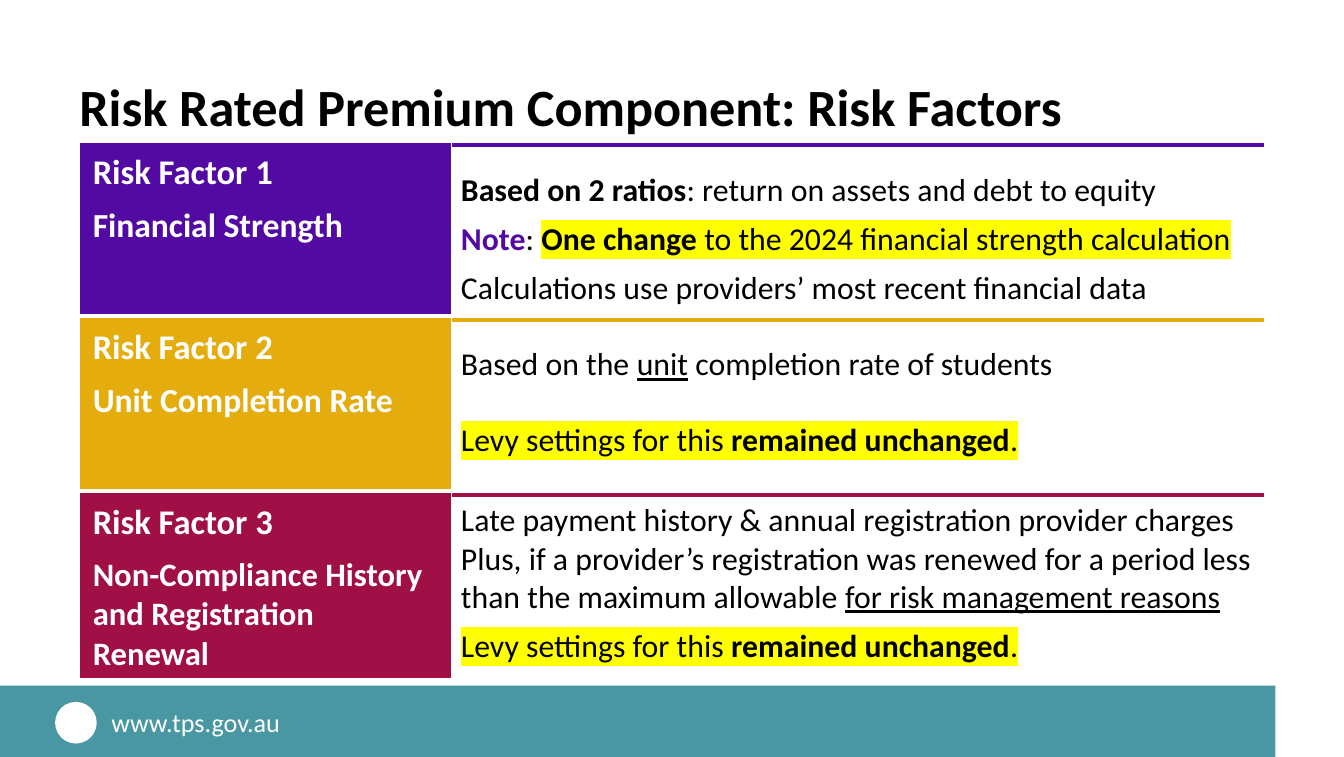
from lxml.etree import SubElement
from pptx import Presentation
from pptx.dml.color import RGBColor
from pptx.enum.shapes import MSO_SHAPE
from pptx.enum.text import MSO_ANCHOR, PP_ALIGN
from pptx.oxml import parse_xml
from pptx.oxml.ns import nsdecls, qn
from pptx.util import Inches, Pt

BLACK, WHITE, TEAL, YELLOW = "000000", "FFFFFF", "4897A2", "FFFF00"
PURPLE, GOLD, CRIMSON = "520AA2", "E5AC0D", "A01047"


def rgb(color):
    return RGBColor.from_string(color)


def run(text, **style):
    return text, style


UNCHANGED = [run("Levy settings for this ", highlight=YELLOW),
             run("remained unchanged", bold=True, highlight=YELLOW),
             run(".", highlight=YELLOW)]

# colour, number, name, name size, text top, text height, space after, paragraphs
FACTORS = [
    (PURPLE, 1, "Financial Strength", 18, 1.22, 1.1, 6, [
        [run("Based on 2 ratios", bold=True),
         run(": return on assets and debt to equity")],
        [run("Note", bold=True, color=PURPLE), run(": "),
         run("One change ", bold=True, highlight=YELLOW),
         run("to the 2024 financial strength calculation", highlight=YELLOW)],
        [run("Calculations use providers’ most recent financial data")],
    ]),
    (GOLD, 2, "Unit Completion Rate", 18, 2.52, 0.93, 20, [
        [run("Based on the "), run("unit", underline=True),
         run(" completion rate of students")],
        UNCHANGED,
    ]),
    (CRIMSON, 3, "Non-Compliance History and Registration Renewal", 17.5, 3.68, 1.67, 6, [
        [run("Late payment history & annual registration provider charges "
             "Plus, if a provider’s registration was renewed for a period less "
             "than the maximum allowable "),
         run("for risk management reasons", underline=True)],
        UNCHANGED,
    ]),
]


class Deck:
    """Holds the font and the current slide."""

    font = "Calibri"

    def __init__(self, prs):
        self.s = prs.slides.add_slide(prs.slide_layouts[5])

    def style(self, p, size, color, bold=None):
        p.font.name, p.font.size, p.font.bold = self.font, Pt(size), bold
        p.font.color.rgb = rgb(color)

    def title(self, text, x, y, w, h):
        sp = self.s.shapes.title
        sp.left, sp.top, sp.width, sp.height = map(Inches, (x, y, w, h))
        tf = sp.text_frame
        tf.margin_left = tf.margin_right = tf.margin_top = tf.margin_bottom = 0
        tf.vertical_anchor = MSO_ANCHOR.TOP
        p = tf.paragraphs[0]
        p.text, p.alignment = text, PP_ALIGN.LEFT
        self.style(p, 28, BLACK, True)

    def shape(self, kind, color, x, y, w, h):
        sp = self.s.shapes.add_shape(kind, *map(Inches, (x, y, w, h)))
        sp.shadow.inherit = False
        sp.fill.solid()
        sp.fill.fore_color.rgb = rgb(color)
        sp.line.fill.background()

    def run(self, p, text, bold=None, underline=None, color=None, highlight=None):
        r = p.add_run()
        r.text = text
        r.font.bold, r.font.underline = bold, underline
        if color:
            r.font.color.rgb = rgb(color)
        if highlight:
            mark = SubElement(r.font._element, qn("a:highlight"))
            SubElement(mark, qn("a:srgbClr"), val=highlight)

    def text(self, paragraphs, x, y, w, h, size, color=BLACK, after=0,
             margins=(0.07, 0.04), anchor=MSO_ANCHOR.TOP):
        tf = self.s.shapes.add_textbox(*map(Inches, (x, y, w, h))).text_frame
        tf.word_wrap, tf.vertical_anchor = True, anchor
        tf.margin_left = tf.margin_right = Inches(margins[0])
        tf.margin_top = tf.margin_bottom = Inches(margins[1])
        for i, runs in enumerate(paragraphs):
            p = tf.add_paragraph() if i else tf.paragraphs[0]
            p.space_after = Pt(after)
            self.style(p, size, color)
            for text, style in runs:
                self.run(p, text, **style)

    def factor_table(self, color, lines, x, y, widths, h):
        """One row: a filled label cell and an open cell, under a coloured rule."""
        box = map(Inches, (x, y, sum(widths), h))
        table = self.s.shapes.add_table(1, 2, *box).table
        table.first_row = table.horz_banding = False
        for i, width in enumerate(widths):
            table.columns[i].width = Inches(width)
            cell = table.cell(0, i)
            cell.fill.background()
            cell._tc.get_or_add_tcPr().insert(0, parse_xml(
                f'<a:lnT {nsdecls("a")} w="{Pt(2.25)}"><a:solidFill>'
                f'<a:srgbClr val="{color}"/></a:solidFill></a:lnT>'))
        label = table.cell(0, 0)
        label.fill.solid()
        label.fill.fore_color.rgb = rgb(color)
        tf = label.text_frame
        for i, (text, size) in enumerate(lines):
            p = tf.add_paragraph() if i else tf.paragraphs[0]
            p.text = text
            self.style(p, size, WHITE, True)
        tf.paragraphs[0].space_after = Pt(6)


def main():
    prs = Presentation()
    prs.slide_width, prs.slide_height = Inches(10), Inches(5.63)
    deck = Deck(prs)
    deck.shape(MSO_SHAPE.RECTANGLE, TEAL, 0, 5.1, 9.49, 0.53)
    deck.title("Risk Rated Premium Component: Risk Factors", 0.59, 0.55, 8.82, 0.47)
    deck.text([[run("www.tps.gov.au")]], 0.73, 5.2, 1.48, 0.34, 14, WHITE,
              margins=(0.1, 0.05), anchor=MSO_ANCHOR.MIDDLE)
    deck.shape(MSO_SHAPE.OVAL, WHITE, 0.41, 5.22, 0.31, 0.31)

    left, top, pitch, widths = 0.59, 1.08, 1.3, (2.77, 6.05)
    for i, (color, number, name, size, y, h, after, paragraphs) in enumerate(FACTORS):
        lines = [(f"Risk Factor {number}", 18.5), (name, size)]
        deck.factor_table(color, lines, left, top + i * pitch, widths, 1.26)
        deck.text(paragraphs, left + widths[0], y, widths[1], h, 17, after=after)
    prs.save("out.pptx")


if __name__ == "__main__":
    main()
